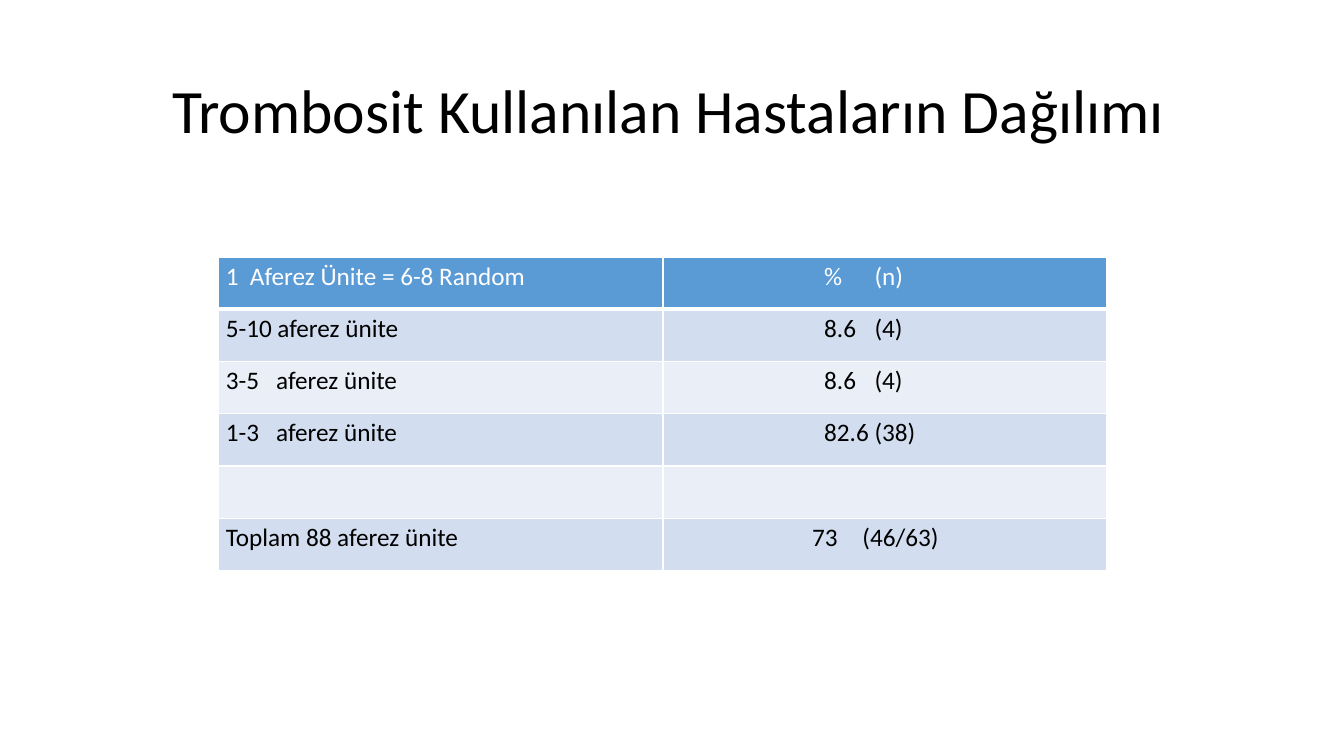
"""Build the slide on the distribution of platelet patients."""
from dataclasses import dataclass

from lxml.etree import SubElement
from pptx import Presentation
from pptx.dml.color import RGBColor
from pptx.enum.text import MSO_ANCHOR
from pptx.oxml.ns import qn
from pptx.util import Inches, Pt

FONT = "Calibri"
HUES = {
    "ink": "000000",
    "white": "FFFFFF",
    "head": "5B9BD5",
    "odd": "D2DEEF",
    "even": "EAEFF7",
}


@dataclass
class Entry:
    text: str
    indent: float = 0
    stop: float = 0


@dataclass
class Row:
    label: Entry
    value: Entry


ROWS = [
    Row(Entry("1  Aferez Ünite = 6-8 Random"), Entry("%\t(n)", 1.53, 2.16)),
    Row(Entry("5-10 aferez ünite"), Entry("8.6\t(4)", 1.53, 2.13)),
    Row(Entry("3-5\taferez ünite", 0, 0.5), Entry("8.6\t(4)", 1.53, 2.13)),
    Row(Entry("1-3\taferez ünite", 0, 0.5), Entry("82.6\t(38)", 1.53, 2.13)),
    Row(Entry(""), Entry("")),
    Row(Entry("Toplam 88 aferez ünite"), Entry("73\t(46/63)", 1.41, 2.0)),
]


def write(para, entry: Entry, size: float, hue: str) -> None:
    props = para._p.get_or_add_pPr()
    props.set("marL", str(Inches(entry.indent)))
    props.set("indent", "0")
    if entry.stop:
        tabs = SubElement(props, qn("a:tabLst"))
        SubElement(tabs, qn("a:tab"), pos=str(Inches(entry.stop)), algn="l")
    run = para.add_run()
    run.text = entry.text
    run.font.name = FONT
    run.font.size = Pt(size)
    run.font.color.rgb = RGBColor.from_string(HUES[hue])


def edge(cell, side: str, width: float) -> None:
    props = cell._tc.get_or_add_tcPr()
    line = SubElement(props, qn(f"a:ln{side}"), w=str(Pt(width)))
    fill = SubElement(line, qn("a:solidFill"))
    SubElement(fill, qn("a:srgbClr"), val=HUES["white"])


def style(cell, entry: Entry, row: int) -> None:
    widths = {"L": 1, "R": 1, "T": 3 if row == 1 else 1, "B": 3 if row == 0 else 1}
    for side, width in widths.items():
        edge(cell, side, width)
    band = "head" if row == 0 else "odd" if row % 2 else "even"
    cell.fill.solid()
    cell.fill.fore_color.rgb = RGBColor.from_string(HUES[band])
    cell.margin_left = cell.margin_right = Inches(0.07)
    cell.margin_top = cell.margin_bottom = Inches(0.04)
    if entry.text:
        para = cell.text_frame.paragraphs[0]
        write(para, entry, 18, "ink" if row else "white")


def add_title(slide) -> None:
    box = slide.shapes.add_textbox(Inches(0.92), Inches(0.4), Inches(11.5), Inches(1.45))
    frame = box.text_frame
    frame.word_wrap = True
    frame.vertical_anchor = MSO_ANCHOR.MIDDLE
    para = frame.paragraphs[0]
    para.line_spacing = 0.9
    write(para, Entry("Trombosit Kullanılan Hastaların Dağılımı", 0.69), 44, "ink")


def add_grid(slide) -> None:
    grid = slide.shapes.add_table(
        len(ROWS), 2, Inches(2.17), Inches(2.55), Inches(8.81), Inches(3.11)
    ).table
    for index, row in enumerate(ROWS):
        for col, entry in enumerate((row.label, row.value)):
            style(grid.cell(index, col), entry, index)


def main() -> None:
    deck = Presentation()
    deck.slide_width = Inches(13.33)
    deck.slide_height = Inches(7.5)
    slide = deck.slides.add_slide(deck.slide_layouts[6])
    add_title(slide)
    add_grid(slide)
    deck.save("out.pptx")


if __name__ == "__main__":
    main()
